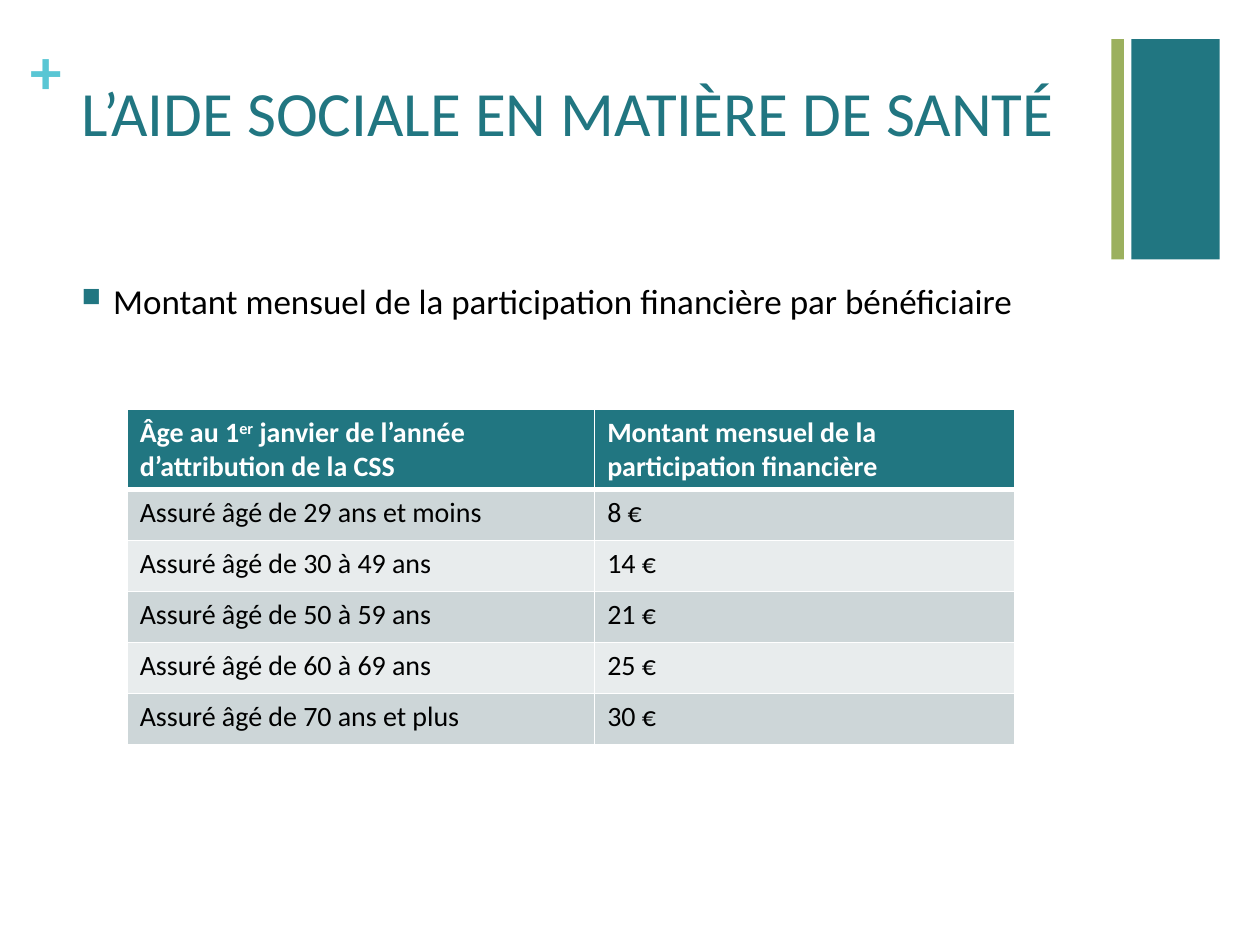
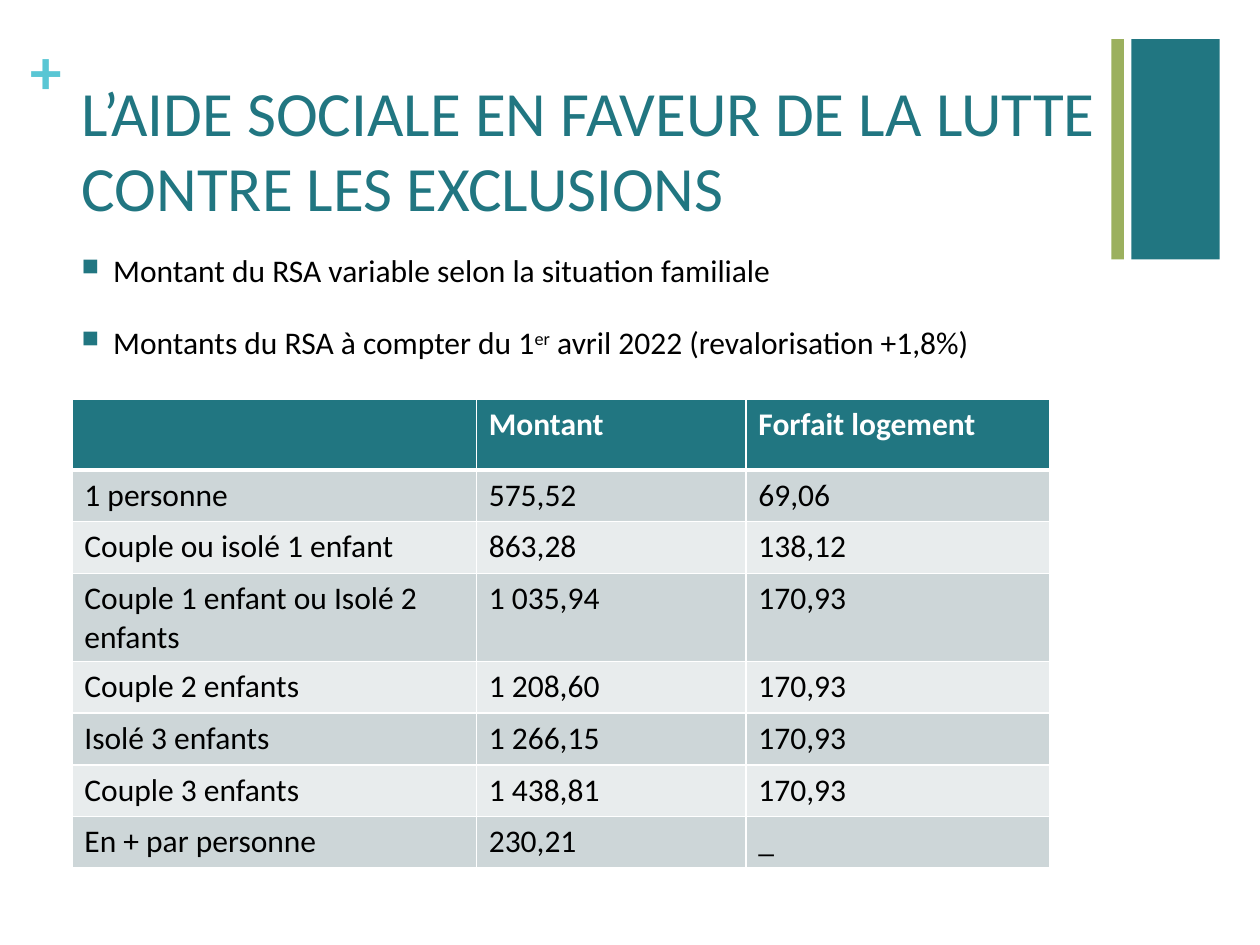
import pptx
import pptx.dml.color
import pptx.enum.shapes
import pptx.enum.text
import pptx.oxml.ns
import pptx.util
import lxml.etree

Inches = pptx.util.Inches
Pt = pptx.util.Pt

FONT = "Calibri"
TEAL = "217681"
GREEN = "9BB05E"
SKY = "59C6D4"
WHITE = "FFFFFF"
BLACK = "000000"
ROW_FILLS = ("CDD6D8", "E8ECED")
SUPERSCRIPT_MARK = "^"
TITLE_ONLY = 5


def rgb(value):
    return pptx.dml.color.RGBColor.from_string(value)


def child(parent, tag, **attributes):
    element = lxml.etree.SubElement(parent, pptx.oxml.ns.qn(tag))
    for key, value in attributes.items():
        element.set(key, str(value))
    return element


def write(paragraph, text, size=18, color=BLACK, bold=False):
    for index, part in enumerate(text.split(SUPERSCRIPT_MARK)):
        run = paragraph.add_run()
        run.text = part
        run.font.name = FONT
        run.font.size = Pt(size)
        run.font.bold = bold
        run.font.color.rgb = rgb(color)
        if index % 2:
            run.font._element.set("baseline", "30000")


class Deck:
    def __init__(self):
        self.presentation = pptx.Presentation()
        self.presentation.slide_width = Inches(10)
        self.presentation.slide_height = Inches(7.5)
        self.slide = None

    def new_slide(self, title):
        layout = self.presentation.slide_layouts[TITLE_ONLY]
        self.slide = self.presentation.slides.add_slide(layout)
        self.band(8.98, 0.7, TEAL)
        self.plus_sign()
        self.band(8.82, 0.1, GREEN)
        self.title(title)

    def band(self, left, width, color):
        band = self.slide.shapes.add_shape(
            pptx.enum.shapes.MSO_SHAPE.RECTANGLE,
            Inches(left), Inches(0.31), Inches(width), Inches(1.75))
        band.shadow.inherit = False
        band.fill.solid()
        band.fill.fore_color.rgb = rgb(color)
        band.line.fill.background()

    def text_frame(self, left, top, width, height):
        box = self.slide.shapes.add_textbox(
            Inches(left), Inches(top), Inches(width), Inches(height))
        box.text_frame.word_wrap = True
        return box.text_frame

    def plus_sign(self):
        frame = self.text_frame(0.24, 0.25, 0.29, 0.61)
        frame.margin_left = frame.margin_right = 0
        frame.margin_top = frame.margin_bottom = 0
        write(frame.paragraphs[0], "+", size=36, color=SKY, bold=True)

    def title(self, text):
        title = self.slide.shapes.title
        title.left, title.top = Inches(0.55), Inches(0.53)
        title.width, title.height = Inches(8.26), Inches(1.22)
        frame = title.text_frame
        frame.word_wrap = True
        frame.auto_size = pptx.enum.text.MSO_AUTO_SIZE.NONE
        frame.vertical_anchor = pptx.enum.text.MSO_ANCHOR.TOP
        frame.paragraphs[0].alignment = pptx.enum.text.PP_ALIGN.LEFT
        write(frame.paragraphs[0], text, size=36, color=TEAL)

    def bullets(self, top, height, lines, size):
        frame = self.text_frame(0.55, top, 8.26, height)
        for index, line in enumerate(lines):
            paragraph = frame.add_paragraph() if index else frame.paragraphs[0]
            paragraph.space_before = Pt(20)
            properties = paragraph._p.get_or_add_pPr()
            properties.set("marL", str(Inches(0.25)))
            properties.set("indent", str(-Inches(0.25)))
            bullet_color = child(properties, "a:buClr")
            child(bullet_color, "a:srgbClr", val=TEAL)
            child(properties, "a:buSzPct", val=75000)
            child(properties, "a:buChar", char="■")
            write(paragraph, line, size=size)

    def table(self, left, top, column_widths, row_heights, rows, size):
        table = self.slide.shapes.add_table(
            len(rows), len(column_widths), Inches(left), Inches(top),
            Inches(sum(column_widths)), Inches(sum(row_heights))).table
        table.horz_banding = False
        for column, width in zip(table.columns, column_widths):
            column.width = Inches(width)
        for index, (height, values) in enumerate(zip(row_heights, rows)):
            table.rows[index].height = Inches(height)
            for cell, value in zip(table.rows[index].cells, values):
                self.cell(cell, value, index, size)

    def cell(self, cell, value, row_index, size):
        header = row_index == 0
        self.borders(cell, top=3 if row_index == 1 else 1, bottom=3 if header else 1)
        cell.fill.solid()
        cell.fill.fore_color.rgb = rgb(TEAL if header else ROW_FILLS[(row_index - 1) % 2])
        if value:
            write(cell.text_frame.paragraphs[0], value, size=size,
                  color=WHITE if header else BLACK, bold=header)

    def borders(self, cell, top, bottom):
        properties = cell._tc.get_or_add_tcPr()
        for side, width in (("L", 1), ("R", 1), ("T", top), ("B", bottom)):
            line = child(properties, "a:ln" + side, w=Pt(width))
            child(child(line, "a:solidFill"), "a:srgbClr", val=WHITE)


def main():
    deck = Deck()

    deck.new_slide("L’AIDE SOCIALE EN MATIÈRE DE SANTÉ")
    deck.bullets(2.17, 4.53, [
        "Montant mensuel de la participation financière par bénéficiaire",
    ], size=20)
    contributions = [
        ("Âge au 1^er^ janvier de l’année d’attribution de la CSS",
         "Montant mensuel de la participation financière"),
        ("Assuré âgé de 29 ans et moins", "8 €"),
        ("Assuré âgé de 30 à 49 ans", "14 €"),
        ("Assuré âgé de 50 à 59 ans", "21 €"),
        ("Assuré âgé de 60 à 69 ans", "25 €"),
        ("Assuré âgé de 70 ans et plus", "30 €"),
    ]
    deck.table(1.01, 3.25, [3.71, 3.33], [0.63] + [0.405] * 5, contributions, size=16)

    deck.new_slide("L’AIDE SOCIALE EN FAVEUR DE LA LUTTE CONTRE LES EXCLUSIONS")
    deck.bullets(1.94, 5.48, [
        "Montant du RSA variable selon la situation familiale",
        "Montants du RSA à compter du 1^er^ avril 2022 (revalorisation +1,8%)",
    ], size=18)
    rsa_amounts = [
        ("", "Montant", "Forfait logement"),
        ("1 personne", "575,52", "69,06"),
        ("Couple ou isolé 1 enfant", "863,28", "138,12"),
        ("Couple 1 enfant ou Isolé 2 enfants", "1 035,94", "170,93"),
        ("Couple 2 enfants", "1 208,60", "170,93"),
        ("Isolé 3 enfants", "1 266,15", "170,93"),
        ("Couple 3 enfants", "1 438,81", "170,93"),
        ("En + par personne", "230,21", "_"),
    ]
    deck.table(0.57, 3.17, [3.21, 2.14, 2.41],
               [0.56, 0.41, 0.41, 0.7] + [0.41] * 4, rsa_amounts, size=18)

    deck.presentation.save("out.pptx")


if __name__ == "__main__":
    main()
